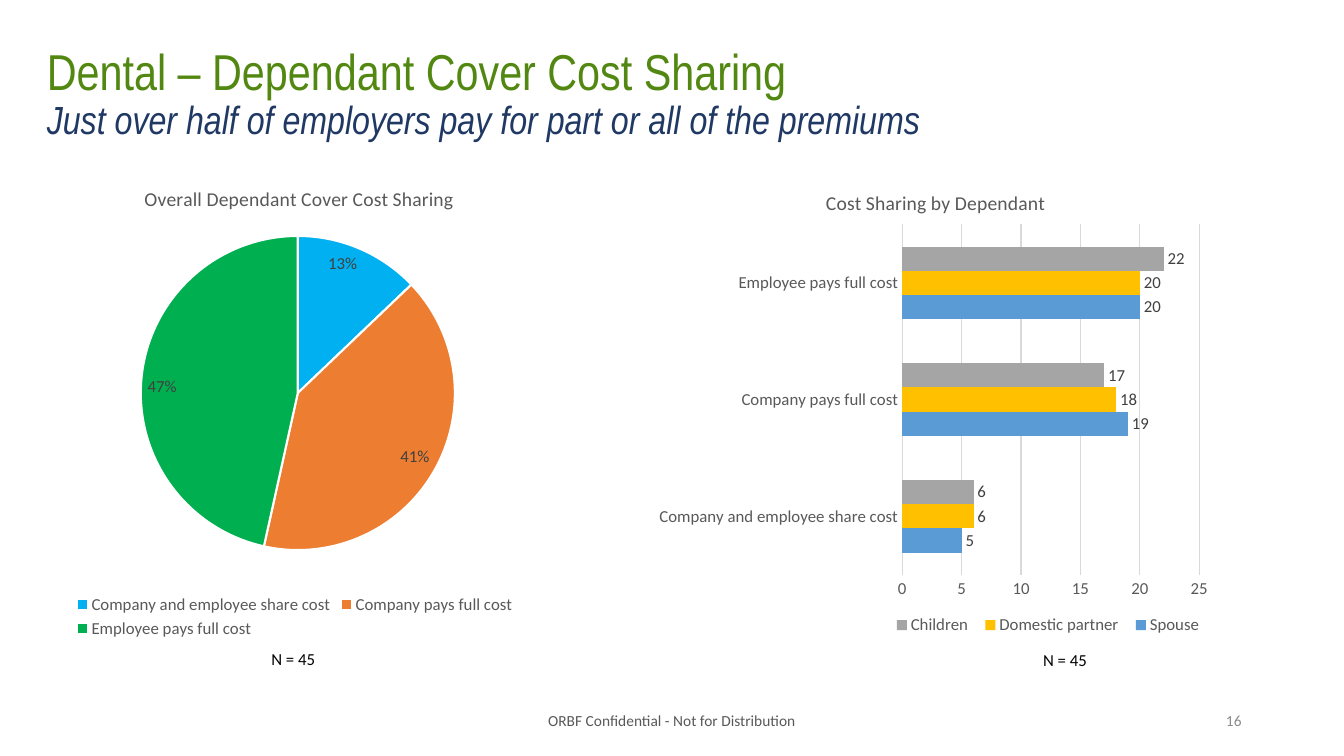
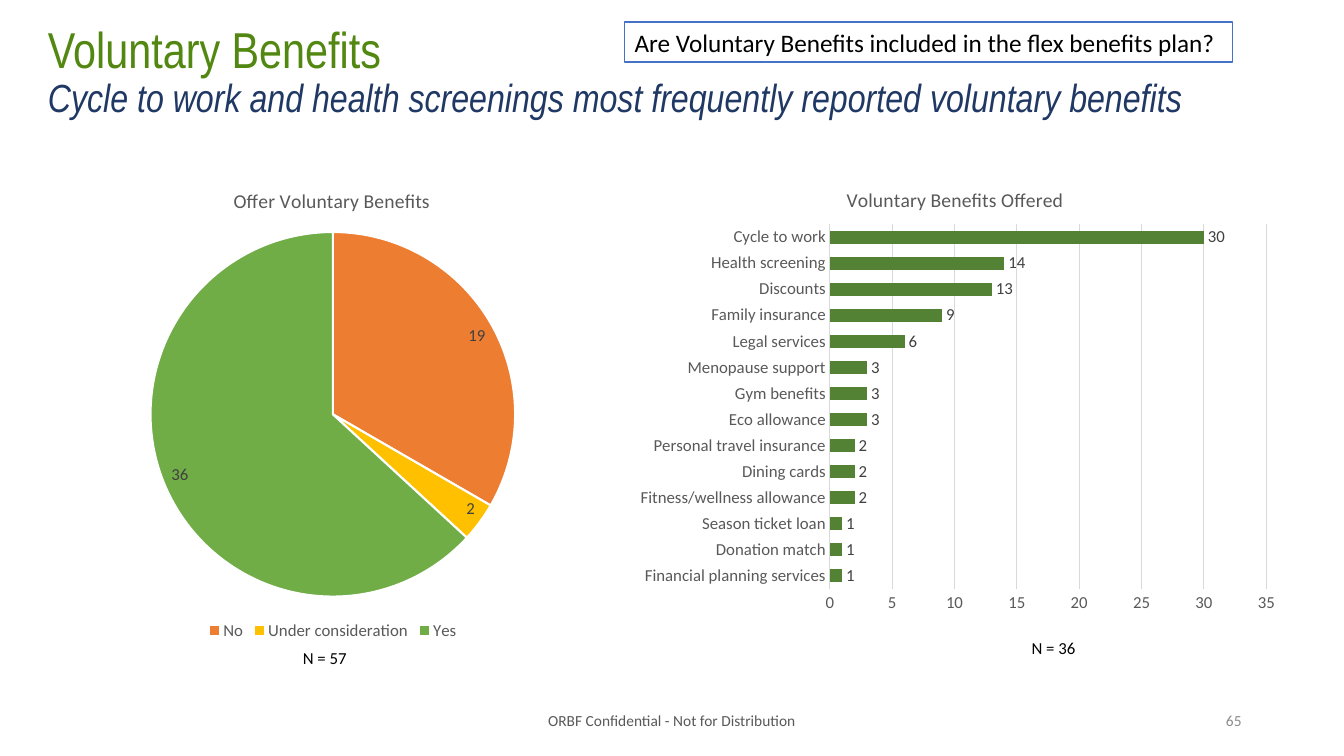
"""Build two survey slides on dental cost sharing and voluntary benefits."""
import lxml.etree
import pptx
import pptx.chart.data
import pptx.dml.color
import pptx.enum.chart
import pptx.enum.shapes
import pptx.enum.text
import pptx.oxml.ns
import pptx.util

PX = 9525
HUES = {
    "title": "528811", "sub": "203864", "text": "000000", "gray": "595959",
    "page": "8C8C8C", "label": "404040", "grid": "D9D9D9", "frame": "4472C4",
    "white": "FFFFFF", "sky": "00B0F0", "orange": "ED7D31", "green": "00B050",
    "gold": "FFC000", "leaf": "70AD47", "blue": "5B9BD5", "silver": "A5A5A5",
    "moss": "548235",
}
FOOT = "ORBF Confidential - Not for Distribution"
COSTS = ["Company and employee share cost", "Company pays full cost", "Employee pays full cost"]
PERKS = [
    ("Financial planning services", 1), ("Donation match", 1), ("Season ticket loan", 1),
    ("Fitness/wellness allowance", 2), ("Dining cards", 2), ("Personal travel insurance", 2),
    ("Eco allowance", 3), ("Gym benefits", 3), ("Menopause support", 3),
    ("Legal services", 6), ("Family insurance", 9), ("Discounts", 13),
    ("Health screening", 14), ("Cycle to work", 30),
]
SLIDES = [
    {
        "title": "Dental – Dependant Cover Cost Sharing",
        "sub": "Just over half of employers pay for part or all of the premiums",
        "box": (35, 21, 1236, 139), "page": "16",
        "notes": [("N = 45", (249, 613, 72, 29)), ("N = 45", (984, 614, 72, 29))],
        "pie": {
            "title": "Overall Dependant Cover Cost Sharing", "box": (9, 155, 544, 457),
            "head": (0.23, 0.04), "plot": (0.23, 0.15, 0.55, 0.66), "form": "0%",
            "cats": COSTS, "rows": [("Series 1", [0.13, 0.41, 0.47], None)],
            "hues": ["sky", "orange", "green"],
        },
        "bar": {
            "title": "Cost Sharing by Dependant", "box": (620, 159, 544, 457),
            "head": (0.3, 0.04), "plot": (0.44, 0.12, 0.52, 0.73), "form": "General",
            "cats": COSTS, "gap": 182, "max": 25, "key": (0.41, 0.92, 0.57, 0.07),
            "rows": [
                ("Spouse", [5, 19, 20], "blue"),
                ("Domestic partner", [6, 18, 20], "gold"),
                ("Children", [6, 17, 22], "silver"),
            ],
        },
    },
    {
        "title": "Voluntary Benefits",
        "sub": "Cycle to work and health screenings most frequently reported voluntary benefits",
        "box": (36, 0, 1104, 139), "page": "65",
        "ask": ("Are Voluntary Benefits included in the flex benefits plan?", (595, 21, 579, 38)),
        "notes": [("N = 57", (279, 612, 75, 29)), ("N = 36", (973, 603, 75, 29))],
        "pie": {
            "title": "Offer Voluntary Benefits", "box": (45, 157, 544, 457),
            "head": (0.32, 0.04), "plot": (0.18, 0.14, 0.64, 0.76), "form": "General",
            "cats": ["No", "Under consideration", "Yes"],
            "rows": [("Series 1", [19, 2, 36], None)],
            "hues": ["orange", "gold", "leaf"],
        },
        "bar": {
            "title": "Voluntary Benefits Offered", "box": (595, 157, 630, 434),
            "head": (0.33, 0.04), "plot": (0.31, 0.13, 0.66, 0.8), "form": "General",
            "cats": [name for name, count in PERKS], "gap": 100, "max": 35,
            "rows": [("Series 1", [count for name, count in PERKS], "moss")],
        },
    },
]


def put(item, **vals):
    for key, val in vals.items():
        setattr(item, key, val)


def scale(box):
    return [side * PX for side in box]


def tint(name):
    return pptx.dml.color.RGBColor.from_string(HUES[name])


def style(font, size, hue, face="Calibri", ital=False):
    put(font, size=pptx.util.Pt(size), name=face, bold=False, italic=ital)
    font.color.rgb = tint(hue)


def paint(fill, hue):
    fill.solid()
    fill.fore_color.rgb = tint(hue)


def rule(line, hue, width):
    paint(line.fill, hue)
    line.width = pptx.util.Pt(width)


def write(shape, text, size, hue, align="LEFT", anchor="MIDDLE"):
    frame = shape.text_frame
    put(frame, word_wrap=True, vertical_anchor=getattr(pptx.enum.text.MSO_ANCHOR, anchor))
    par = frame.paragraphs[0]
    par.alignment = getattr(pptx.enum.text.PP_ALIGN, align)
    run = par.add_run()
    run.text = text
    style(run.font, size, hue)


def label(slide, text, box, *look):
    write(slide.shapes.add_textbox(*scale(box)), text, *look)


def head(slide, page):
    shape = slide.shapes.title
    put(shape, **dict(zip(("left", "top", "width", "height"), scale(page["box"]))))
    frame = shape.text_frame
    put(frame, word_wrap=True, auto_size=pptx.enum.text.MSO_AUTO_SIZE.NONE,
        vertical_anchor=pptx.enum.text.MSO_ANCHOR.MIDDLE)
    par = frame.paragraphs[0]
    put(par, alignment=pptx.enum.text.PP_ALIGN.LEFT, line_spacing=0.9)
    for key, size in (("title", 36), ("sub", 28)):
        if key == "sub":
            par.add_line_break()
        run = par.add_run()
        run.text = page[key]
        style(run.font, size, key, "Arial Narrow", key == "sub")


def place(part, index, spot, inner=False):
    tag = pptx.oxml.ns.qn
    for old in part.findall(tag("c:layout")):
        part.remove(old)
    layout = part.makeelement(tag("c:layout"))
    part.insert(index, layout)
    manual = lxml.etree.SubElement(layout, tag("c:manualLayout"))
    vals = [("layoutTarget", "inner")] if inner else []
    vals += [("xMode", "edge"), ("yMode", "edge"), *zip("xywh", spot)]
    for name, val in vals:
        lxml.etree.SubElement(manual, tag("c:" + name)).set("val", str(val))


def draw(slide, data, kind):
    enum = pptx.enum.chart
    source = pptx.chart.data.CategoryChartData(number_format=data["form"])
    source.categories = data["cats"]
    for name, vals, hue in data["rows"]:
        source.add_series(name, vals)
    chart = slide.shapes.add_chart(kind, *scale(data["box"]), source).chart
    style(chart.font, 12, "text")
    chart.has_title = True
    title = chart.chart_title
    title.include_in_layout = False
    run = title.text_frame.paragraphs[0].add_run()
    run.text = data["title"]
    style(run.font, 14, "gray")
    place(title._element, 1, data["head"])
    plot = chart.plots[0]
    place(plot._element.getparent(), 0, data["plot"], True)
    pie = "hues" in data
    put(plot, vary_by_categories=pie, has_data_labels=True)
    spot = enum.XL_LABEL_POSITION
    put(plot.data_labels, show_value=True, show_percentage=False, number_format=data["form"],
        number_format_is_linked=False, position=spot.INSIDE_END if pie else spot.OUTSIDE_END)
    style(plot.data_labels.font, 12, "label")
    chart.has_legend = pie or len(data["rows"]) > 1
    if chart.has_legend:
        put(chart.legend, position=enum.XL_LEGEND_POSITION.BOTTOM, include_in_layout=False)
        style(chart.legend.font, 12, "gray")
        if "key" in data:
            place(chart.legend._element, 1, data["key"])
    return chart


def add_pie(slide, data):
    chart = draw(slide, data, pptx.enum.chart.XL_CHART_TYPE.PIE)
    for index, hue in enumerate(data["hues"]):
        form = chart.plots[0].series[0].points[index].format
        paint(form.fill, hue)
        rule(form.line, "white", 1.5)


def add_bar(slide, data):
    chart = draw(slide, data, pptx.enum.chart.XL_CHART_TYPE.BAR_CLUSTERED)
    plot = chart.plots[0]
    put(plot, gap_width=data["gap"], overlap=0)
    for row, (name, vals, hue) in zip(plot.series, data["rows"]):
        paint(row.format.fill, hue)
    cat, val = chart.category_axis, chart.value_axis
    for axis in (cat, val):
        put(axis, major_tick_mark=pptx.enum.chart.XL_TICK_MARK.NONE,
            minor_tick_mark=pptx.enum.chart.XL_TICK_MARK.NONE)
        style(axis.tick_labels.font, 12, "gray")
    put(val, minimum_scale=0, maximum_scale=data["max"], major_unit=5, has_major_gridlines=True)
    rule(val.major_gridlines.format.line, "grid", 0.75)
    rule(cat.format.line, "grid", 0.75)
    val.format.line.fill.background()


def add_ask(slide, text, box):
    shape = slide.shapes.add_shape(pptx.enum.shapes.MSO_SHAPE.RECTANGLE, *scale(box))
    shape.shadow.inherit = False
    shape.fill.background()
    rule(shape.line, "frame", 1)
    write(shape, text, 18, "text")


def main():
    deck = pptx.Presentation()
    put(deck, slide_width=1280 * PX, slide_height=720 * PX)
    for page in SLIDES:
        slide = deck.slides.add_slide(deck.slide_layouts[5])
        head(slide, page)
        label(slide, FOOT, (424, 667, 432, 38), 11, "gray", "CENTER")
        label(slide, page["page"], (904, 667, 288, 38), 11, "page", "RIGHT")
        add_pie(slide, page["pie"])
        add_bar(slide, page["bar"])
        for text, box in page["notes"]:
            label(slide, text, box, 12, "text", "LEFT", "TOP")
        if "ask" in page:
            add_ask(slide, *page["ask"])
    deck.save("out.pptx")


if __name__ == "__main__":
    main()
